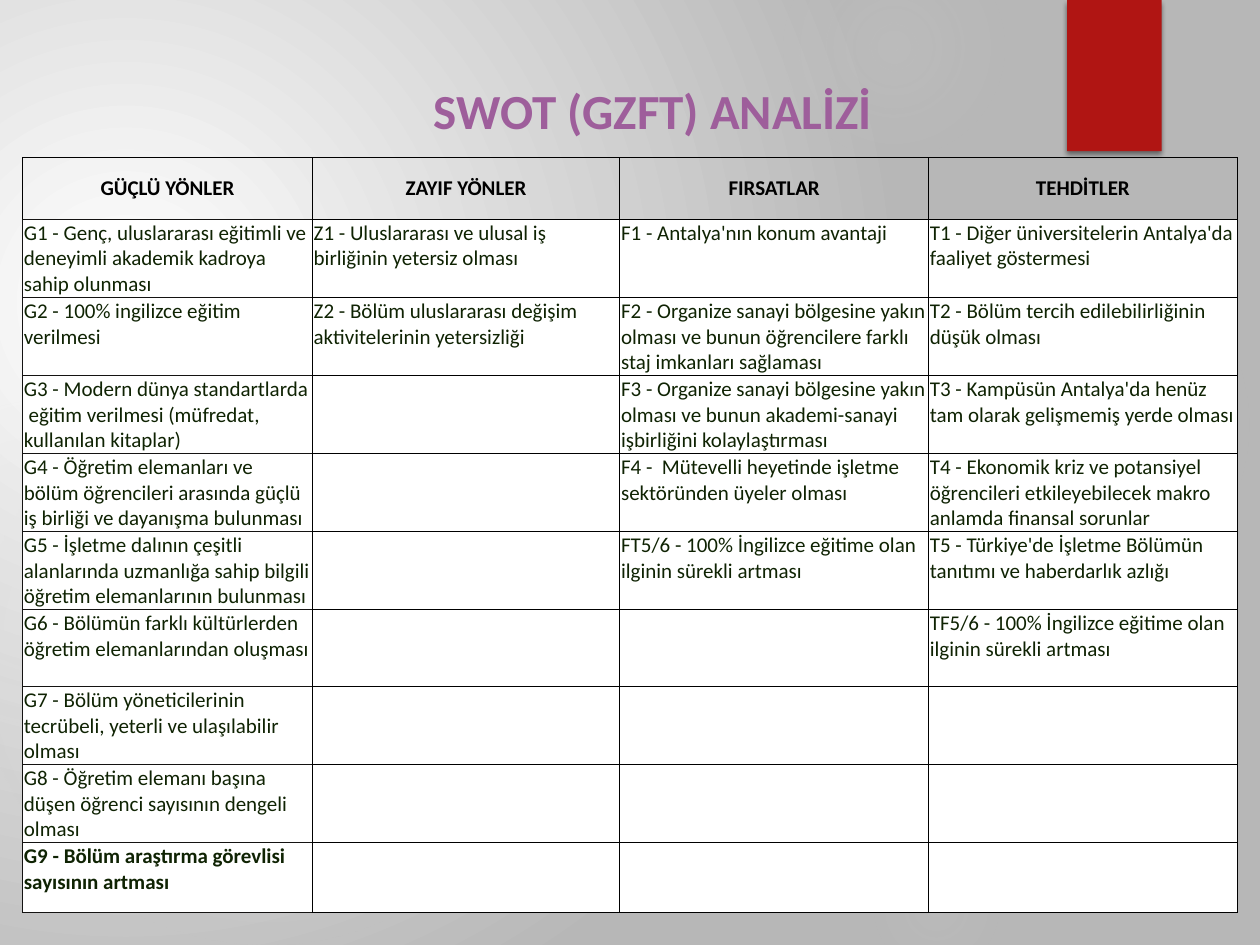
from itertools import zip_longest

from pptx import Presentation
from pptx.dml.color import RGBColor
from pptx.enum.shapes import MSO_SHAPE as Shape
from pptx.enum.text import MSO_ANCHOR as Anchor, MSO_AUTO_SIZE as AutoSize, PP_ALIGN as Align
from pptx.oxml import parse_xml
from pptx.oxml.ns import nsdecls, qn
from pptx.util import Inches, Pt

WHITE = RGBColor(0xFF, 0xFF, 0xFF)
GREY = RGBColor(0xB7, 0xB7, 0xB7)
GLOW = RGBColor(0xD9, 0xD9, 0xD9)
RED = RGBColor(0xB0, 0x15, 0x13)
PURPLE = RGBColor(0x9E, 0x5E, 0x9B)
BLACK = RGBColor(0x00, 0x00, 0x00)
INK = RGBColor(0x14, 0x13, 0x12)
DARK_GREEN = RGBColor(0x0F, 0x23, 0x03)

TITLE_FONT = {"name": "Calibri", "size": Pt(28), "bold": True}
HEADER_FONT = {"name": "Calibri", "size": Pt(12), "bold": True}
BODY_FONT = {"name": "Calibri", "size": Pt(12), "bold": False}
HEADER_CELL = {"vertical_anchor": Anchor.MIDDLE, "margin_left": 0, "margin_top": 0,
               "margin_right": 0, "margin_bottom": 0}
BODY_CELL = {"vertical_anchor": Anchor.TOP, "margin_left": Inches(0.01), "margin_top": Inches(0.01),
             "margin_right": Inches(0.01), "margin_bottom": 0}

# left, top, diameter, then (position, opacity) stops in percent
GLOWS = [
    (6.89, 1.83, 3.08, [(0, 7), (36, 6), (69, 0)]),
    (6.22, -0.5, 1.75, [(0, 14), (36, 7), (73, 0)]),
    (6.89, 6.67, 1.08, [(0, 9), (36, 5), (66, 0)]),
    (-0.17, 2.92, 4.58, [(0, 11), (36, 10), (75, 0)]),
    (-0.92, 3.17, 2.58, [(0, 8), (36, 8), (72, 0)]),
]

SWOT = {
    "GÜÇLÜ YÖNLER": [
        "G1 - Genç, uluslararası eğitimli ve deneyimli akademik kadroya sahip olunması",
        "G2 - 100% ingilizce eğitim verilmesi",
        "G3 - Modern dünya standartlarda  eğitim verilmesi (müfredat, kullanılan kitaplar)",
        "G4 - Öğretim elemanları ve bölüm öğrencileri arasında güçlü iş birliği ve dayanışma bulunması",
        "G5 - İşletme dalının çeşitli alanlarında uzmanlığa sahip bilgili öğretim elemanlarının bulunması",
        "G6 - Bölümün farklı kültürlerden öğretim elemanlarından oluşması",
        "G7 - Bölüm yöneticilerinin tecrübeli, yeterli ve ulaşılabilir olması",
        "G8 - Öğretim elemanı başına düşen öğrenci sayısının dengeli olması",
        "G9 - Bölüm araştırma görevlisi sayısının artması",
    ],
    "ZAYIF YÖNLER": [
        "Z1 - Uluslararası ve ulusal iş birliğinin yetersiz olması",
        "Z2 - Bölüm uluslararası değişim aktivitelerinin yetersizliği",
    ],
    "FIRSATLAR": [
        "F1 - Antalya'nın konum avantaji",
        "F2 - Organize sanayi bölgesine yakın olması ve bunun öğrencilere farklı staj imkanları sağlaması",
        "F3 - Organize sanayi bölgesine yakın olması ve bunun akademi-sanayi işbirliğini kolaylaştırması",
        "F4 -  Mütevelli heyetinde işletme sektöründen üyeler olması",
        "FT5/6 - 100% İngilizce eğitime olan ilginin sürekli artması",
    ],
    "TEHDİTLER": [
        "T1 - Diğer üniversitelerin Antalya'da faaliyet göstermesi",
        "T2 - Bölüm tercih edilebilirliğinin düşük olması",
        "T3 - Kampüsün Antalya'da henüz tam olarak gelişmemiş yerde olması",
        "T4 - Ekonomik kriz ve potansiyel öğrencileri etkileyebilecek makro anlamda finansal sorunlar",
        "T5 - Türkiye'de İşletme Bölümün tanıtımı ve haberdarlık azlığı",
        "TF5/6 - 100% İngilizce eğitime olan ilginin sürekli artması",
    ],
}
COLUMN_WIDTHS = [2.3, 2.44, 2.45, 2.45]
ROW_HEIGHTS = [0.49] + [0.61] * 6 + [0.41] * 2 + [0.55]
BOLD_ENTRY = "G9"


def apply(target, values):
    for name, value in values.items():
        setattr(target, name, value)


def paint_radial(owner, fill, stops, focus):
    """Fill with a circular gradient of (position, colour, opacity) stops."""
    fill.solid()
    solid = owner.find(".//" + qn("a:solidFill"))
    stop_xml = "".join(
        f'<a:gs pos="{position * 1000}"><a:srgbClr val="{color}">'
        f'<a:alpha val="{opacity * 1000}"/></a:srgbClr></a:gs>'
        for position, color, opacity in stops)
    left, top, right, bottom = (edge * 1000 for edge in focus)
    solid.getparent().replace(solid, parse_xml(
        f'<a:gradFill {nsdecls("a")} rotWithShape="1"><a:gsLst>{stop_xml}</a:gsLst>'
        f'<a:path path="circle"><a:fillToRect l="{left}" t="{top}" r="{right}" b="{bottom}"/>'
        f'</a:path></a:gradFill>'))


def add_backdrop(slide):
    paint_radial(slide.element, slide.background.fill,
                 [(0, WHITE, 100), (100, GREY, 100)], (45, 65, 125, 100))
    for left, top, diameter, stops in GLOWS:
        glow = slide.shapes.add_shape(Shape.OVAL, Inches(left), Inches(top),
                                      Inches(diameter), Inches(diameter))
        glow.shadow.inherit = False
        glow.line.fill.background()
        paint_radial(glow.element.spPr, glow.fill,
                     [(position, GLOW, opacity) for position, opacity in stops], (50,) * 4)


def add_ribbon(slide, *box):
    ribbon = slide.shapes.add_shape(Shape.RECTANGLE, *box)
    ribbon.fill.solid()
    ribbon.fill.fore_color.rgb = RED
    ribbon.line.fill.background()
    ribbon.shadow.inherit = False
    ribbon.element.spPr.find(qn("a:effectLst")).append(parse_xml(
        f'<a:outerShdw {nsdecls("a")} blurRad="{Pt(3)}" dist="{Pt(2)}" dir="5400000" rotWithShape="0">'
        f'<a:srgbClr val="{BLACK}"><a:alpha val="45000"/></a:srgbClr></a:outerShdw>'))


def add_title(slide, left, top, width, height):
    title = slide.shapes.title
    apply(title, {"left": left, "top": top, "width": width, "height": height})
    title.text = "SWOT (GZFT) ANALİZİ"
    apply(title.text_frame, {"auto_size": AutoSize.NONE, "word_wrap": True,
                             "vertical_anchor": Anchor.MIDDLE})
    heading = title.text_frame.paragraphs[0]
    heading.alignment = Align.CENTER
    apply(heading.runs[0].font, TITLE_FONT)
    heading.runs[0].font.color.rgb = PURPLE
    slide.shapes.element.append(title.element)  # in front of the backdrop


def set_borders(cell, colors):
    for side, color in zip("LRTB", colors):
        cell._tc.get_or_add_tcPr().append(parse_xml(
            f'<a:ln{side} {nsdecls("a")} w="{Pt(0.5)}"><a:solidFill>'
            f'<a:srgbClr val="{color}"/></a:solidFill></a:ln{side}>'))


def fill_cell(cell, text, is_header, is_first):
    cell.text = text
    apply(cell, HEADER_CELL if is_header else BODY_CELL)
    edge = INK if is_first and not is_header else BLACK
    set_borders(cell, (edge, BLACK, edge, INK if is_first else BLACK))
    if is_header:
        cell.fill.background()
    else:
        cell.fill.solid()
        cell.fill.fore_color.rgb = WHITE
    entry = cell.text_frame.paragraphs[0]
    entry.alignment = Align.CENTER if is_header else Align.LEFT
    apply(entry.font, HEADER_FONT if is_header or text.startswith(BOLD_ENTRY) else BODY_FONT)
    entry.font.color.rgb = BLACK if is_header else DARK_GREEN
    for run in entry.runs:
        apply(run.font, HEADER_FONT if is_header or text.startswith(BOLD_ENTRY) else BODY_FONT)
        run.font.color.rgb = BLACK if is_header else DARK_GREEN


def add_swot_table(slide, *box):
    entries = [list(SWOT), *zip_longest(*SWOT.values(), fillvalue="")]
    table = slide.shapes.add_table(len(entries), len(SWOT), *box).table
    apply(table, {"first_row": False, "horz_banding": False})
    for column, width in zip(table.columns, COLUMN_WIDTHS):
        column.width = Inches(width)
    for row, height in zip(table.rows, ROW_HEIGHTS):
        row.height = Inches(height)
    for r, row_entries in enumerate(entries):
        for c, text in enumerate(row_entries):
            fill_cell(table.cell(r, c), text, r == 0, c == 0)


def main():
    deck = Presentation()
    deck.slide_width, deck.slide_height = Inches(10), Inches(7.5)
    slide = deck.slides.add_slide(deck.slide_layouts[5])
    add_backdrop(slide)
    add_ribbon(slide, Inches(8.47), 0, Inches(0.75), Inches(1.2))
    add_title(slide, Inches(2.77), Inches(0.59), Inches(4.82), Inches(0.57))
    add_swot_table(slide, Inches(0.18), Inches(1.25), Inches(9.65), Inches(5.95))
    deck.save("out.pptx")


if __name__ == "__main__":
    main()
